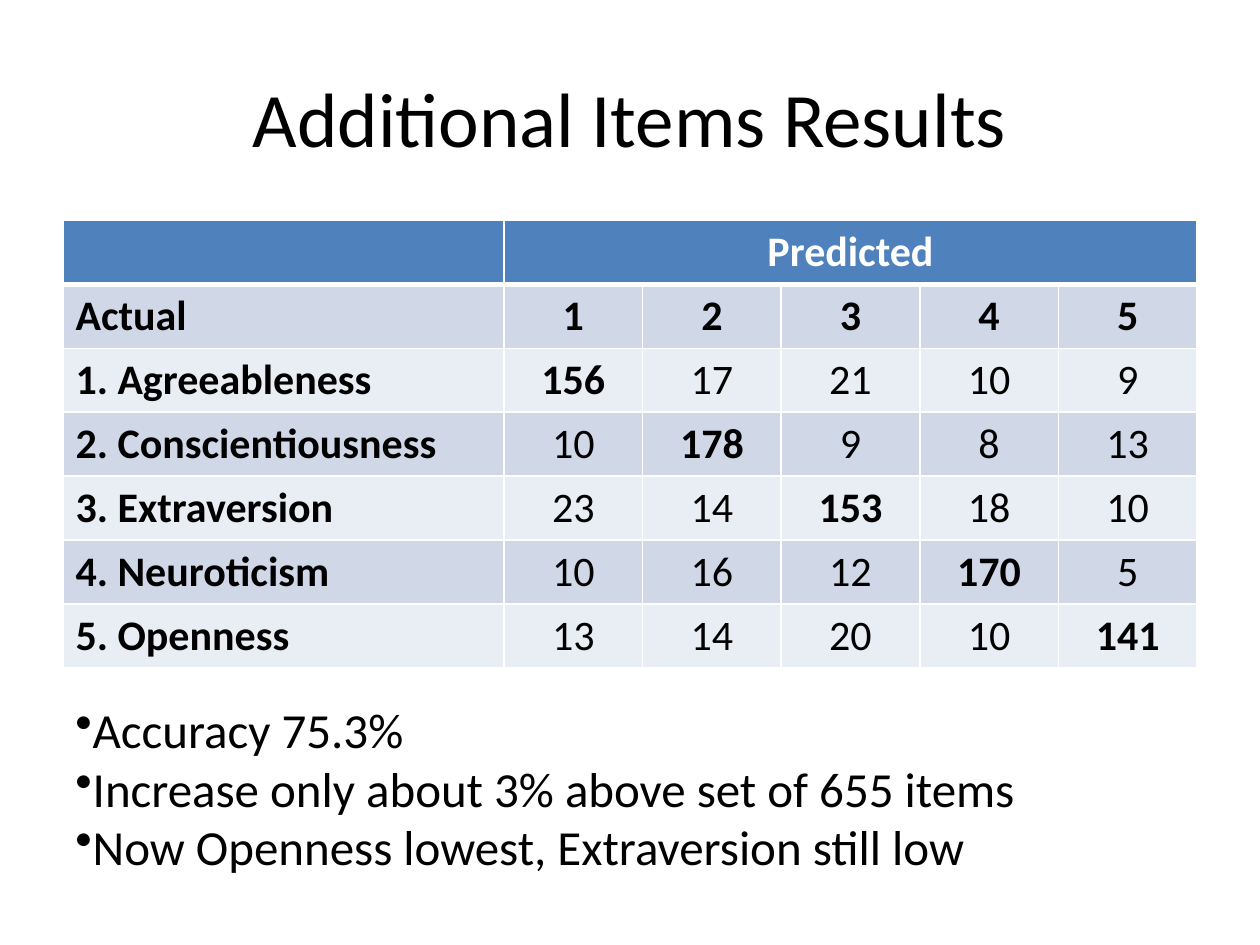
from lxml.etree import SubElement
from pptx import Presentation
from pptx.dml.color import RGBColor
from pptx.enum.text import MSO_ANCHOR as ANCHOR, PP_ALIGN as ALIGN
from pptx.oxml.ns import qn
from pptx.util import Inches, Pt

FONT = "Calibri"
BLACK, WHITE, BLUE = "000000", "FFFFFF", "4F81BD"
BANDS = ["D0D8E8", "E9EDF4"]

TRAITS = ["Agreeableness", "Conscientiousness", "Extraversion", "Neuroticism", "Openness"]
COUNTS = [
    [156, 17, 21, 10, 9],
    [10, 178, 9, 8, 13],
    [23, 14, 153, 18, 10],
    [10, 16, 12, 170, 5],
    [13, 14, 20, 10, 141],
]
FINDINGS = [
    "Accuracy 75.3%",
    "Increase only about 3% above set of 655 items",
    "Now Openness lowest, Extraversion still low",
]


def rgb(value):
    return RGBColor.from_string(value)


def style(p, color=BLACK, align=ALIGN.LEFT, **formats):
    p.alignment = align
    for r in p.runs:
        for name, value in {"name": FONT, **formats}.items():
            setattr(r.font, name, value)
        r.font.color.rgb = rgb(color)


def place(sp, box):
    sp.left, sp.top, sp.width, sp.height = map(Inches, box)


def add_title(s, box, text):
    sp = s.shapes.title
    place(sp, box)
    sp.text_frame.text = text
    sp.text_frame.vertical_anchor = ANCHOR.MIDDLE
    style(sp.text_frame.paragraphs[0], align=ALIGN.CENTER, size=Pt(44))


def set_borders(cell, **widths):
    tc_pr = cell._tc.get_or_add_tcPr()
    for side in "LRTB":
        ln = SubElement(tc_pr, qn(f"a:ln{side}"), w=str(Pt(widths.get(side, 1))))
        fill = SubElement(ln, qn("a:solidFill"))
        SubElement(fill, qn("a:srgbClr"), val=WHITE)


def fill_cell(cell, text, row, col):
    header = row == 0
    set_borders(cell, **({"B": 3} if header else {"T": 3} if row == 1 else {}))
    cell.fill.solid()
    cell.fill.fore_color.rgb = rgb(BLUE if header else BANDS[(row - 1) % 2])
    cell.text = str(text)
    p = cell.text_frame.paragraphs[0]
    # Labels and the correct predictions on the diagonal are bold
    style(p, WHITE if header else BLACK, ALIGN.CENTER if col else ALIGN.LEFT,
          size=Pt(24), bold=row < 2 or col == 0 or col == row - 1)
    p.font.size = Pt(24)


def add_confusion_table(s, box, label_width):
    classes = range(1, len(TRAITS) + 1)
    rows = [["", "Predicted"] + [""] * (len(TRAITS) - 1), ["Actual", *classes]]
    rows += [[f"{n}. {trait}", *counts] for n, trait, counts in zip(classes, TRAITS, COUNTS)]
    n_cols = len(rows[0])
    table = s.shapes.add_table(len(rows), n_cols, *map(Inches, box)).table

    # Wide label column, equal class columns
    for i, column in enumerate(table.columns):
        column.width = Inches((box[2] - label_width) / (n_cols - 1) if i else label_width)
    for i, values in enumerate(rows):
        for j, value in enumerate(values):
            fill_cell(table.cell(i, j), value, i, j)
    table.cell(0, 1).merge(table.cell(0, n_cols - 1))


def add_findings(s, box, lines):
    tf = s.shapes.add_textbox(*map(Inches, box)).text_frame
    tf.word_wrap = True
    for i, line in enumerate(lines):
        p = tf.paragraphs[0] if i == 0 else tf.add_paragraph()
        p.text = line
        SubElement(p._p.get_or_add_pPr(), qn("a:buChar"), char="•")
        style(p, size=Pt(28))


def main():
    prs = Presentation()
    prs.slide_width, prs.slide_height = Inches(10), Inches(7.5)
    s = prs.slides.add_slide(prs.slide_layouts[5])
    margin, width = 0.5, 9

    add_title(s, (margin, 0.3, width, 1.25), "Additional Items Results")
    add_confusion_table(s, (margin, 1.75, width, 3.5), label_width=3.5)
    add_findings(s, (margin, 5.5, 8.83, 1.51), FINDINGS)
    prs.save("out.pptx")


if __name__ == "__main__":
    main()
